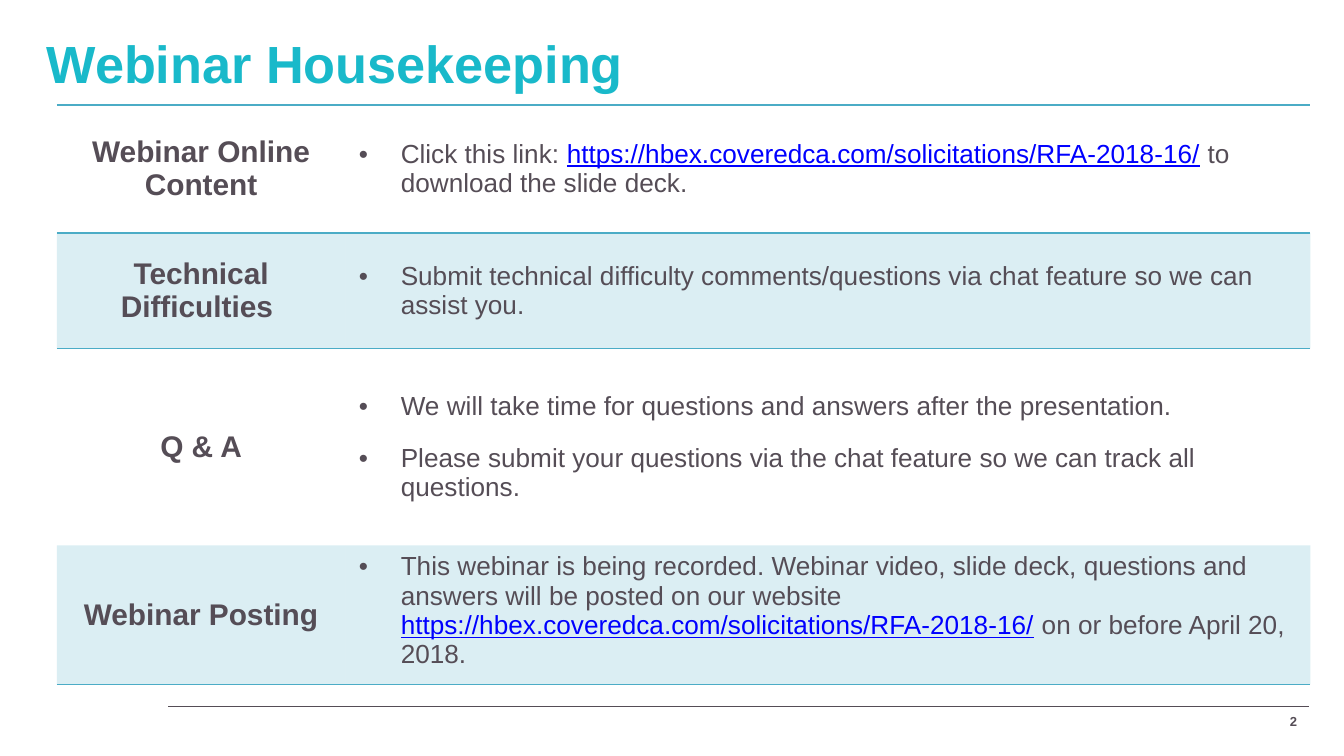
from dataclasses import dataclass

from lxml.etree import SubElement
from pptx import Presentation
from pptx.dml.color import RGBColor
from pptx.enum.shapes import MSO_CONNECTOR
from pptx.enum.text import MSO_ANCHOR, PP_ALIGN
from pptx.oxml import parse_xml
from pptx.oxml.ns import nsdecls, qn
from pptx.util import Pt

TEAL, GREY, ACCENT, BLUE = "19B9CA", "554D56", "4BACC6", "0000FF"
LINK = "https://hbex.coveredca.com/solicitations/RFA-2018-16/"
TOPICS = [
    ("Webinar Online Content",
     [["Click this link: ", LINK, " to download the slide deck."]]),
    ("Technical Difficulties ",
     [["Submit technical difficulty comments/questions via chat feature so we can assist you."]]),
    ("Q & A",
     [["We will take time for questions and answers after the presentation."],
      ["Please submit your questions via the chat feature so we can track all questions."]]),
    ("Webinar Posting",
     [["This webinar is being recorded. Webinar video, slide deck, questions and answers "
       "will be posted on our website ", LINK, " on or before April 20, 2018."]]),
]
COLUMN_WIDTHS = [154.5, 517]
ROW_HEIGHTS = [68.5, 62, 105.5, 62.5]


def colour(value):
    return RGBColor.from_string(value)


@dataclass
class Deck:
    slide: object
    font: str = "Arial"

    def style(self, font, size, value, bold=False):
        font.name, font.size, font.bold = self.font, Pt(size), bold
        font.color.rgb = colour(value)

    def text(self, box, wording, size, value, align=PP_ALIGN.LEFT, spacing=1.0):
        frame = self.slide.shapes.add_textbox(*map(Pt, box)).text_frame
        frame.word_wrap = True
        frame.vertical_anchor = MSO_ANCHOR.MIDDLE
        paragraph = frame.paragraphs[0]
        paragraph.text = wording
        paragraph.alignment, paragraph.line_spacing = align, spacing
        self.style(paragraph.font, size, value, True)

    def rule(self, left, right, y):
        line = self.slide.shapes.add_connector(
            MSO_CONNECTOR.STRAIGHT, Pt(left), Pt(y), Pt(right), Pt(y))
        line.line.color.rgb, line.line.width = colour(GREY), Pt(1)
        SubElement(line._element.spPr, qn("a:effectLst"))

    def label(self, cell, wording):
        paragraph = cell.text_frame.paragraphs[0]
        paragraph.text = wording
        paragraph.alignment = PP_ALIGN.CENTER
        paragraph.space_after = Pt(6)
        self.style(paragraph.font, 16, GREY, True)

    def bullets(self, cell, items):
        frame = cell.text_frame
        for index, parts in enumerate(items):
            paragraph = frame.add_paragraph() if index else frame.paragraphs[0]
            if index:
                paragraph.space_before = Pt(6)
            paragraph.space_after = Pt(6)
            properties = paragraph._p.get_or_add_pPr()
            properties.set("marL", str(Pt(22.5)))
            properties.set("indent", str(-Pt(22.5)))
            SubElement(properties, qn("a:buFont")).set("typeface", self.font)
            SubElement(properties, qn("a:buChar")).set("char", "•")
            for part in parts:
                run = paragraph.add_run()
                run.text = part
                self.style(run.font, 14, BLUE if part == LINK else GREY)
                run.font.underline = part == LINK

    def paint(self, cell, shaded, edges):
        if shaded:
            cell.fill.solid()
            cell.fill.fore_color.rgb = colour(ACCENT)
            tint = cell._tc.tcPr.find(".//" + qn("a:srgbClr"))
            SubElement(tint, qn("a:alpha")).set("val", "20000")
        else:
            cell.fill.background()
        for position, edge in enumerate(edges):
            cell._tc.tcPr.insert(position, parse_xml(
                f'<a:ln{edge} {nsdecls("a")} w="{Pt(1)}"><a:solidFill>'
                f'<a:srgbClr val="{ACCENT}"/></a:solidFill></a:ln{edge}>'))

    def table(self, left, top, topics):
        frame = self.slide.shapes.add_table(
            len(topics), 2, Pt(left), Pt(top),
            Pt(sum(COLUMN_WIDTHS)), Pt(sum(ROW_HEIGHTS)))
        table = frame.table
        table.first_row = table.horz_banding = False
        table._tbl.tblPr.find(qn("a:tableStyleId")).text = "{2D5ABB26-0587-4C30-8999-92F81FD0307C}"
        for column, width in zip(table.columns, COLUMN_WIDTHS):
            column.width = Pt(width)
        borders = ["TB", "T", "", "B"]
        for index, (topic, items) in enumerate(topics):
            table.rows[index].height = Pt(ROW_HEIGHTS[index])
            label, details = table.cell(index, 0), table.cell(index, 1)
            self.label(label, topic)
            self.bullets(details, items)
            for cell in (label, details):
                cell.vertical_anchor = MSO_ANCHOR.MIDDLE
                self.paint(cell, index % 2 == 1, borders[index])
        details.vertical_anchor = MSO_ANCHOR.TOP


def main():
    presentation = Presentation()
    presentation.slide_width, presentation.slide_height = Pt(720), Pt(405)
    deck = Deck(presentation.slides.add_slide(presentation.slide_layouts[6]))
    deck.rule(90, 701.5, 378.5)
    deck.text((18, 10.8, 684, 49.7), "Webinar Housekeeping", 28, TEAL, spacing=0.9)
    deck.table(30.5, 56.2, TOPICS)
    deck.text((644.5, 375.8, 57.5, 21.6), "2", 7, GREY, PP_ALIGN.RIGHT)
    presentation.save("out.pptx")


if __name__ == "__main__":
    main()
